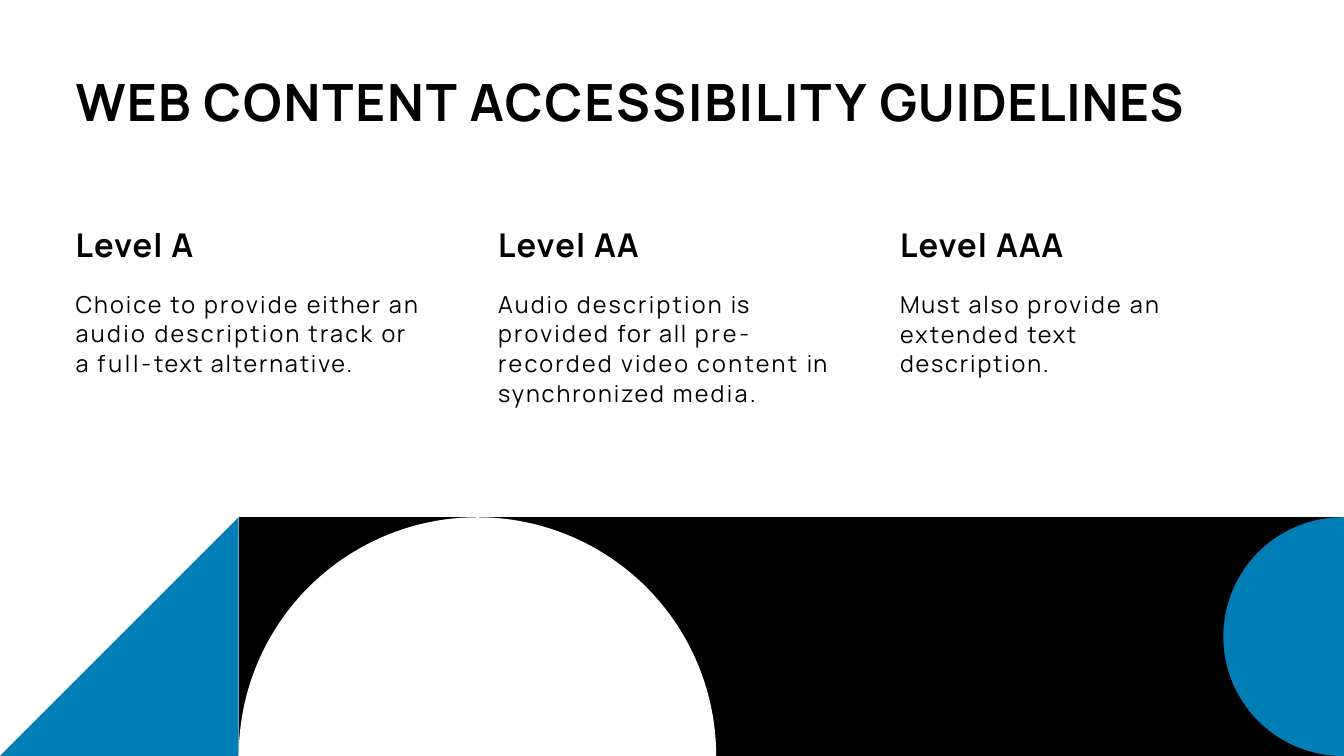
import math

import pptx
import pptx.dml.color
import pptx.enum.shapes
import pptx.enum.text
import pptx.util

Pt = pptx.util.Pt
BLACK, BLUE, WHITE = "000000", "007DB4", "FFFFFF"
WIDTH, HEIGHT = 1440, 810
MODULE = 255.8  # height of the decorative band
BAND_TOP = HEIGHT - MODULE
BAND_RIGHT = 1438.6


def paint(fill, color):
    fill.solid()
    fill.fore_color.rgb = pptx.dml.color.RGBColor.from_string(color)


def write(paragraph, runs, size, bold, space_before):
    """Fill a paragraph with (text, letter spacing in points) runs."""
    paragraph.alignment = pptx.enum.text.PP_ALIGN.LEFT
    paragraph.space_before = Pt(space_before)
    properties = paragraph._p.get_or_add_pPr()
    properties.set("marL", str(Pt(0.9)))
    properties.set("indent", "0")
    for text, spacing in runs:
        run = paragraph.add_run()
        run.text = text
        run.font.name = "Manrope"
        run.font.size = Pt(size)
        run.font.bold = bold
        paint(run.font.fill, BLACK)
        run.font._element.set("spc", str(round(spacing * 100)))


prs = pptx.Presentation()
prs.slide_width, prs.slide_height = Pt(WIDTH), Pt(HEIGHT)
slide = prs.slides.add_slide(prs.slide_layouts[5])
paint(slide.background.fill, WHITE)

# Decorative band along the bottom
triangle = [(0, HEIGHT), (MODULE, BAND_TOP), (MODULE, HEIGHT)]
left_block = [(MODULE, BAND_TOP), (3 * MODULE, BAND_TOP),
              (3 * MODULE, HEIGHT), (MODULE, HEIGHT)]
right_block = [(3 * MODULE, BAND_TOP), (BAND_RIGHT, BAND_TOP),
               (BAND_RIGHT, HEIGHT), (3 * MODULE, HEIGHT)]
half_turn = [math.radians(angle) for angle in range(0, 181, 2)]
dome = [(2 * MODULE - MODULE * math.cos(a), HEIGHT - MODULE * math.sin(a))
        for a in half_turn]
radius = MODULE / 2
edge_disc = [(BAND_RIGHT - radius * math.sin(a), BAND_TOP + radius - radius * math.cos(a))
             for a in half_turn] + [(WIDTH, HEIGHT), (WIDTH, BAND_TOP)]

for outline, color in [(right_block, BLACK), (triangle, BLUE), (left_block, BLACK),
                       (edge_disc, BLUE), (dome, WHITE)]:
    points = [(Pt(x), Pt(y)) for x, y in outline]
    builder = slide.shapes.build_freeform(*points[0])
    builder.add_line_segments(points[1:], close=True)
    piece = builder.convert_to_shape()
    piece.shadow.inherit = False
    paint(piece.fill, color)
    piece.line.fill.background()

# Title
title = slide.shapes.title
title.left, title.top, title.width, title.height = Pt(80), Pt(43.2), Pt(1280), Pt(98.6)
write(title.text_frame.paragraphs[0],
      [("WEB ", 1.4), ("CONTENT ACCESSIBILITY ", 2.1), ("GUIDELINES", 0.9)], 55, True, 1)

# Conformance levels: left, width, height, grade, spacing of grade, description
levels = [
    (80, 373, 200, "A", -0.5,
     [("Choice ", 2.2), ("to ", 2.3), ("provide ", 2.4), ("either ", 2), ("an ", 2.5),
      ("audio ", 2.6), ("description track ", 2.4), ("or ", 1.8), ("a ", 2.2),
      ("full-", 3), ("text ", 1.8), ("alternative.", 2)]),
    (532.8, 373, 200, "AA", -0.2,
     [("Audio ", 2.2), ("description ", 2.4), ("is ", 0.8), ("provided ", 2.5),
      ("for all ", 1.9), ("pre- ", 3.3), ("recorded ", 2.5), ("video ", 2.3),
      ("content ", 2.6), ("in ", 1.3), ("synchronized ", 2.1), ("media.", 2.5)]),
    (963.4, 347, 167, "AAA", -0.2,
     [("Must ", 1.9), ("also ", 2.1), ("provide ", 2.4), ("an ", 2.5),
      ("extended ", 2.4), ("text ", 1.8), ("description.", 2)]),
]
frames = [(title.text_frame, 31.7)]
for left, width, height, grade, grade_spacing, description in levels:
    level = slide.shapes.add_textbox(Pt(left), Pt(239.8), Pt(width), Pt(height)).text_frame
    write(level.paragraphs[0], [("Level ", 1.2), (grade, grade_spacing)], 35, True, 1)
    body = level.add_paragraph()
    body.line_spacing = 1.07
    write(body, description, 25, False, 25.8)
    frames.append((level, 0.7))

for frame, top_inset in frames:
    frame.word_wrap = True
    frame.auto_size = pptx.enum.text.MSO_AUTO_SIZE.SHAPE_TO_FIT_TEXT
    frame.vertical_anchor = pptx.enum.text.MSO_ANCHOR.TOP
    frame.margin_left = frame.margin_right = frame.margin_bottom = 0
    frame.margin_top = Pt(top_inset)

prs.save("out.pptx")
